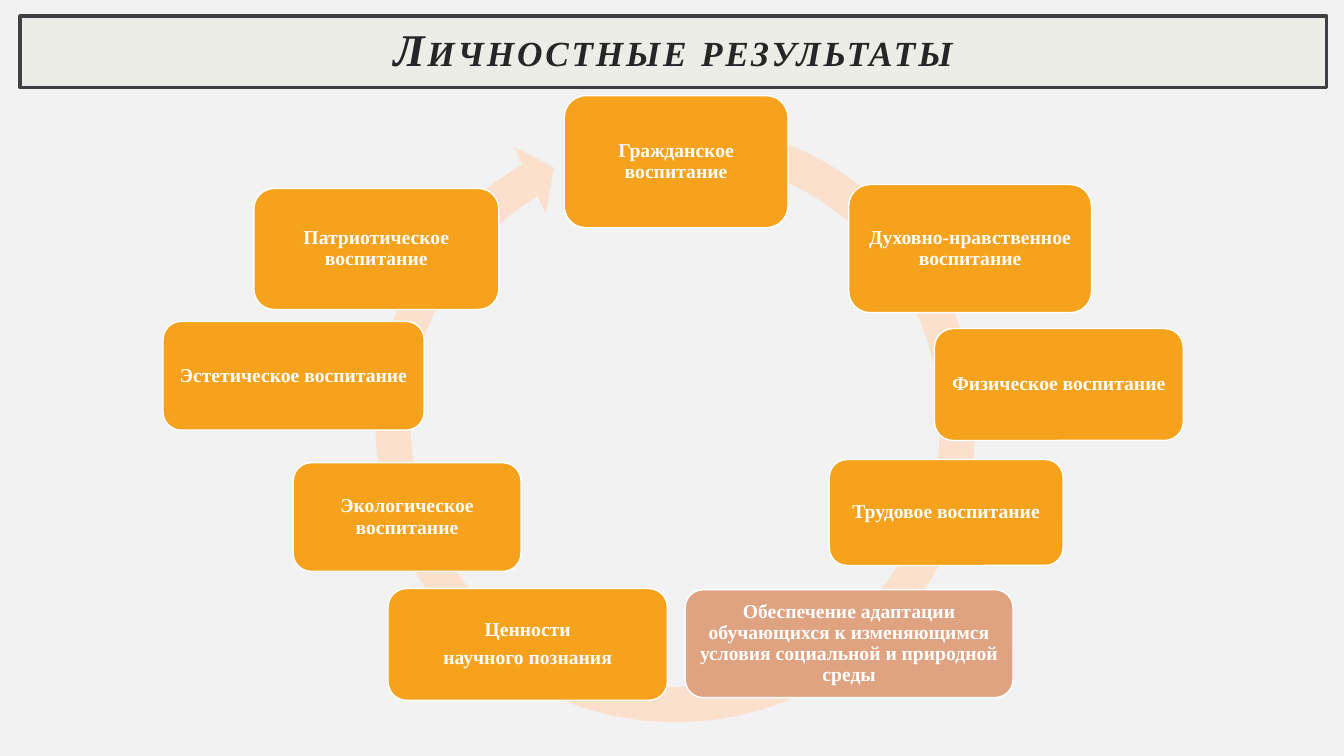
from dataclasses import dataclass

import pptx
import pptx.dml.color
import pptx.enum.shapes
import pptx.enum.text
import pptx.util
from pptx.util import Cm

FONT = "Times New Roman"
COLORS = {
    "background": "F2F2F2",
    "title_fill": "EBEDE6",
    "title_line": "404040",
    "title_text": "262626",
    "ring": "FBE0CD",
    "orange": "F6A21D",
    "tan": "E0A382",
    "white": "FFFFFF",
}
SHAPES = pptx.enum.shapes.MSO_SHAPE


@dataclass
class Card:
    """A rounded box on the ring; lengths in centimetres."""
    left: float
    top: float
    width: float
    height: float
    text: str
    fill: str = "orange"


# Clockwise from the top
CARDS = [
    Card(14.22, 2.41, 5.64, 3.33, "Гражданское воспитание"),
    Card(21.39, 4.65, 6.12, 3.23, "Духовно-нравственное воспитание"),
    Card(23.55, 8.28, 6.27, 2.82, "Физическое воспитание"),
    Card(20.9, 11.58, 5.89, 2.67, "Трудовое воспитание"),
    Card(17.27, 14.86, 8.26, 2.72,
         "Обеспечение адаптации обучающихся к изменяющимся "
         "условия социальной и природной среды", "tan"),
    Card(9.78, 14.83, 7.04, 2.82, "Ценности\nнаучного познания"),
    Card(7.39, 11.66, 5.74, 2.74, "Экологическое воспитание"),
    Card(4.11, 8.1, 6.58, 2.74, "Эстетическое воспитание"),
    Card(6.4, 4.75, 6.17, 3.05, "Патриотическое воспитание"),
]


def rgb(name: str) -> pptx.dml.color.RGBColor:
    return pptx.dml.color.RGBColor.from_string(COLORS[name])


def add_box(s, kind, left: float, top: float, width: float, height: float,
            fill: str, line: str = "", weight: float = 1):
    sp = s.shapes.add_shape(kind, Cm(left), Cm(top), Cm(width), Cm(height))
    sp.shadow.inherit = False
    sp.fill.solid()
    sp.fill.fore_color.rgb = rgb(fill)
    if line:
        sp.line.color.rgb = rgb(line)
        sp.line.width = pptx.util.Pt(weight)
    else:
        sp.line.fill.background()
    return sp


def set_frame(sp, inset: float):
    tf = sp.text_frame
    tf.word_wrap = True
    tf.vertical_anchor = pptx.enum.text.MSO_ANCHOR.MIDDLE
    tf.margin_left = tf.margin_right = Cm(inset)
    tf.margin_top = tf.margin_bottom = Cm(inset)
    return tf


def style_paragraph(p, color: str) -> None:
    p.alignment = pptx.enum.text.PP_ALIGN.CENTER
    p.line_spacing = 0.9
    p.font.name = FONT
    p.font.bold = True
    p.font.color.rgb = rgb(color)


def add_title(s) -> None:
    sp = add_box(s, SHAPES.RECTANGLE, 0.51, 0.41, 32.92, 1.8,
                 "title_fill", "title_line", 2.5)
    p = set_frame(sp, 0.51).paragraphs[0]
    style_paragraph(p, "title_text")
    p.font.italic = True
    for text, size in (("Л", 32.4), ("ИЧНОСТНЫЕ РЕЗУЛЬТАТЫ", 25.2)):
        r = p.add_run()
        r.text = text
        r.font.size = pptx.util.Pt(size)
        r.font._element.set("spc", "200")  # letter spacing of 2 pt


def add_ring(s) -> None:
    sp = add_box(s, SHAPES.CIRCULAR_ARROW, 8.97, 2.59, 16.1, 16.1, "ring")
    for i, value in enumerate((0.055, 3.307, 143.39, 170.52, 0.058)):
        sp.adjustments[i] = value


def add_card(s, card: Card) -> None:
    sp = add_box(s, SHAPES.ROUNDED_RECTANGLE, card.left, card.top,
                 card.width, card.height, card.fill, "white")
    tf = set_frame(sp, 0.15)
    tf.text = card.text
    for p in tf.paragraphs:
        style_paragraph(p, "white")
        p.font.size = pptx.util.Pt(14)
        p.space_after = pptx.util.Pt(4.9)


def main() -> None:
    prs = pptx.Presentation()
    prs.slide_width, prs.slide_height = Cm(33.87), Cm(19.05)
    s = prs.slides.add_slide(prs.slide_layouts[6])
    s.background.fill.solid()
    s.background.fill.fore_color.rgb = rgb("background")

    # Title bar, then the ring with its cards
    add_title(s)
    add_ring(s)
    for card in CARDS:
        add_card(s, card)
    prs.save("out.pptx")


if __name__ == "__main__":
    main()
